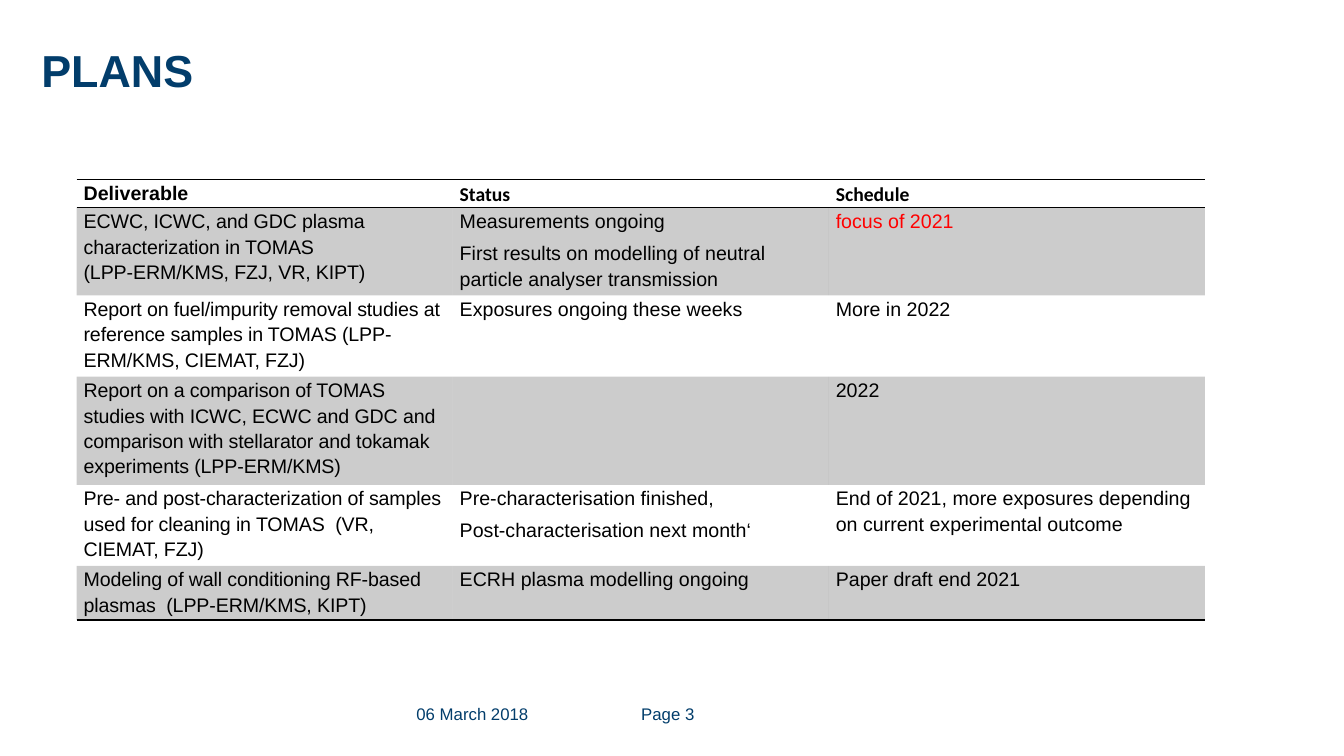
"""Build the PLANS slide with its table of deliverables, status and schedule."""
import pptx
import pptx.dml.color
import pptx.oxml
import pptx.oxml.ns
import pptx.util

Inches = pptx.util.Inches
Pt = pptx.util.Pt

NAVY, BLACK, RED = "023D6B", "000000", "FF0000"
NO_STYLE = "{2D5ABB26-0587-4C30-8999-92F81FD0307C}"

TITLE = "PLANS"
FOOTERS = [("06 March 2018", 4.13, 1.75), ("Page 3", 6.36, 0.79)]
HEADERS = [("Deliverable", "Arial"), ("Status", "Calibri"), ("Schedule", "Calibri")]
PLANS = [
    ("ECWC, ICWC, and GDC plasma characterization in TOMAS\v(LPP-ERM/KMS, FZJ, VR, KIPT)",
     "Measurements ongoing\nFirst results on modelling of neutral particle analyser transmission",
     "focus of 2021"),
    ("Report on fuel/impurity removal studies at reference samples in TOMAS (LPP-ERM/KMS, CIEMAT, FZJ)",
     "Exposures ongoing these weeks",
     "More in 2022"),
    ("Report on a comparison of TOMAS studies with ICWC, ECWC and GDC and comparison with "
     "stellarator and tokamak experiments (LPP-ERM/KMS)",
     "",
     "2022"),
    ("Pre- and post-characterization of samples used for cleaning in TOMAS  (VR, CIEMAT, FZJ)",
     "Pre-characterisation finished,\nPost-characterisation next month‘",
     "End of 2021, more exposures depending on current experimental outcome"),
    ("Modeling of wall conditioning RF-based plasmas  (LPP-ERM/KMS, KIPT)",
     "ECRH plasma modelling ongoing",
     "Paper draft end 2021"),
]
FOCUS = "focus of 2021"
ROW_HEIGHTS = [0.28, 0.82, 0.75, 1.0, 0.75, 0.5]
COLUMN_WIDTH = 3.73


def paint(target, color):
    target.rgb = pptx.dml.color.RGBColor.from_string(color)


def write(frame, text, size=14, font="Arial", color=BLACK, bold=False,
          line=None, gap=0, tracking=0):
    frame.word_wrap = True
    for index, words in enumerate(text.split("\n")):
        para = frame.paragraphs[0] if index == 0 else frame.add_paragraph()
        para.text = words
        para.line_spacing = line
        para.space_before = Pt(gap if index else 0)
        para.space_after = Pt(gap)
        for span in para.runs:
            span.font.size = Pt(size)
            span.font.name = font
            span.font.bold = bold
            paint(span.font.color, color)
            if tracking:
                span.font._element.set("spc", str(round(tracking * 100)))
        for line_break in para._p.findall(pptx.oxml.ns.qn("a:br")):
            line_break.append(pptx.oxml.parse_xml(
                f'<a:rPr {pptx.oxml.ns.nsdecls("a")} sz="{size * 100}"/>'))


def add_text(page, text, left, top, width, height, **style):
    box = page.shapes.add_textbox(*map(Inches, (left, top, width, height)))
    frame = box.text_frame
    frame.margin_left = frame.margin_right = frame.margin_top = frame.margin_bottom = 0
    write(frame, text, **style)


def add_border(properties, side, position):
    border = pptx.oxml.parse_xml(
        f'<a:{side} {pptx.oxml.ns.nsdecls("a")} w="{Pt(1)}"><a:solidFill>'
        f'<a:srgbClr val="{BLACK}"/></a:solidFill></a:{side}>')
    properties.insert(position, border)


def format_cell(cell, row, last_row):
    cell.margin_left = cell.margin_right = Inches(0.07)
    cell.margin_top = cell.margin_bottom = 0
    properties = cell._tc.get_or_add_tcPr()
    if row % 2:
        cell.fill.solid()
        paint(cell.fill.fore_color, BLACK)
        shade = properties.find(".//" + pptx.oxml.ns.qn("a:srgbClr"))
        shade.append(pptx.oxml.parse_xml(
            f'<a:alpha {pptx.oxml.ns.nsdecls("a")} val="20000"/>'))
    else:
        cell.fill.background()
    if row in (0, last_row):
        add_border(properties, "lnB", 0)
    if row == 0:
        add_border(properties, "lnT", 0)


def add_plan_table(page):
    rows, columns = len(PLANS) + 1, len(HEADERS)
    holder = page.shapes.add_table(rows, columns, Inches(0.76), Inches(1.78),
                                   Inches(COLUMN_WIDTH * columns), Inches(sum(ROW_HEIGHTS)))
    table = holder.table
    table.horz_banding = False
    table._tbl.tblPr.find(pptx.oxml.ns.qn("a:tableStyleId")).text = NO_STYLE
    for column in table.columns:
        column.width = Inches(COLUMN_WIDTH)
    for row, height in enumerate(ROW_HEIGHTS):
        table.rows[row].height = Inches(height)
        for column, (heading, heading_font) in enumerate(HEADERS):
            cell = table.cell(row, column)
            format_cell(cell, row, rows - 1)
            text = PLANS[row - 1][column] if row else heading
            if text:
                write(cell.text_frame, text, line=1.15, gap=2.4, bold=row == 0,
                      font="Arial" if row else heading_font,
                      color=RED if text == FOCUS else BLACK,
                      tracking=-0.1 if row and column == 0 else 0)


def main():
    deck = pptx.Presentation()
    deck.slide_width, deck.slide_height = Inches(13.33), Inches(7.5)
    page = deck.slides.add_slide(deck.slide_layouts[6])
    add_text(page, TITLE, 0.41, 0.35, 12.52, 1.23, size=32, color=NAVY, bold=True, line=1.14)
    for text, left, width in FOOTERS:
        add_text(page, text, left, 6.98, width, 0.24, size=12, color=NAVY)
    add_plan_table(page)
    deck.save("out.pptx")


if __name__ == "__main__":
    main()
